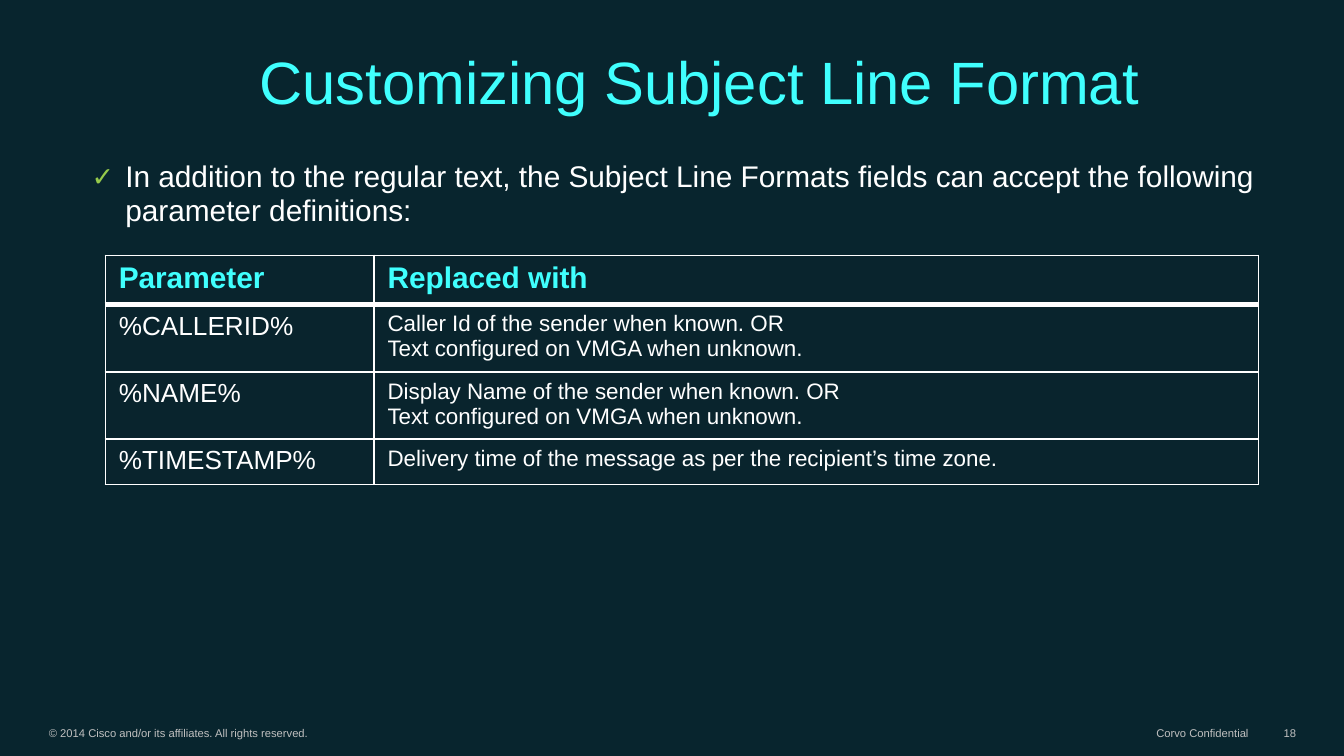
from lxml.etree import SubElement
from pptx import Presentation
from pptx.dml.color import RGBColor
from pptx.enum.text import MSO_ANCHOR, PP_ALIGN
from pptx.oxml.ns import qn
from pptx.util import Inches, Pt

# Content
TITLE = "Customizing Subject Line Format"
INTRO = ("In addition to the regular text, the Subject Line Formats fields "
         "can accept the following parameter definitions:")
ROWS = [
    ("Parameter", ["Replaced with"]),
    ("%CALLERID%", ["Caller Id of the sender when known. OR",
                    "Text configured on VMGA when unknown."]),
    ("%NAME%", ["Display Name of the sender when known. OR",
                "Text configured on VMGA when unknown."]),
    ("%TIMESTAMP%", ["Delivery time of the message as per the recipient’s time zone."]),
]
# Footer: text, left and width in percent, alignment, wrap
FOOT = [
    ("© 2014 Cisco and/or its affiliates. All rights reserved.",
     2.74, 37.4, PP_ALIGN.LEFT, True),
    ("Corvo Confidential", 85.1, 8.7, PP_ALIGN.RIGHT, False),
    ("18", 94.54, 2.8, PP_ALIGN.RIGHT, False),
]

# Theme
THEME = {
    "font": "Arial",
    "back": "08252E", "cell": "09242D", "text": "FFFFFF",
    "head": "40FFFE", "tick": "96CA4B", "foot": "C0C0C0",
    "title": 32, "body": 16, "name": 14, "note": 12, "small": 6,
}
WIDE = 10
HIGH = WIDE * 9 / 16

# Percent shares of the slide
COLS = [20, 65.8]
LINES = {1: 6.4, 2: 8.85}
LAST = 6


def across(share):
    return Inches(WIDE * share / 100)


def down(share):
    return Inches(HIGH * share / 100)


def tint(key):
    return RGBColor.from_string(THEME[key])


def put(item, **form):
    for key, value in form.items():
        setattr(item, key, value)


def write(frame, lines, size, color, bold=False, **form):
    """Fill a text frame, one paragraph a line."""
    for num, line in enumerate(lines):
        para = frame.add_paragraph() if num else frame.paragraphs[0]
        put(para, **form)
        run = para.add_run()
        run.text = line
        put(run.font, name=THEME["font"], size=Pt(THEME[size]), bold=bold)
        run.font.color.rgb = tint(color)


def add_box(slide, area, pads, wrap=True, anchor=MSO_ANCHOR.TOP):
    left, top, width, height = area
    frame = slide.shapes.add_textbox(
        across(left), down(top), across(width), down(height)).text_frame
    side, edge = map(Inches, pads)
    put(frame, word_wrap=wrap, vertical_anchor=anchor, margin_left=side,
        margin_right=side, margin_top=edge, margin_bottom=edge)
    return frame


def add_tick(para):
    props = para._p.get_or_add_pPr()
    props.set("marL", str(Inches(0.25)))
    props.set("indent", str(-Inches(0.25)))
    color = SubElement(props, qn("a:buClr"))
    SubElement(color, qn("a:srgbClr"), val=THEME["tick"])
    SubElement(props, qn("a:buSzPct"), val="90000")
    SubElement(props, qn("a:buFont"), typeface=THEME["font"])
    SubElement(props, qn("a:buChar"), char="✓")


def add_rules(cell, sides):
    props = cell._tc.get_or_add_tcPr()
    for side, width in sides.items():
        line = SubElement(props, qn(f"a:ln{side}"), w=str(Pt(width)))
        fill = SubElement(line, qn("a:solidFill"))
        SubElement(fill, qn("a:srgbClr"), val=THEME["text"])


def add_grid(slide):
    highs = [LINES[len(notes)] for _, notes in ROWS[:-1]] + [LAST]
    grid = slide.shapes.add_table(
        len(ROWS), len(COLS), across(7.84), down(33.78),
        across(sum(COLS)), down(sum(highs))).table
    put(grid, first_row=False, horz_banding=False)
    for col, share in zip(grid.columns, COLS):
        col.width = across(share)
    for num, (name, notes) in enumerate(ROWS):
        grid.rows[num].height = down(highs[num])
        head = num == 0
        sizes = ("body", "body") if head else ("name", "note")
        sides = {"L": 1, "R": 1, "T": 3 if num == 1 else 1, "B": 3 if head else 1}
        for cell, lines, size in zip(grid.rows[num].cells, ([name], notes), sizes):
            add_rules(cell, sides)
            cell.fill.solid()
            cell.fill.fore_color.rgb = tint("cell")
            write(cell.text_frame, lines, size, "head" if head else "text", head)


def main():
    deck = Presentation()
    put(deck, slide_width=Inches(WIDE), slide_height=Inches(HIGH))
    slide = deck.slides.add_slide(deck.slide_layouts[6])
    slide.background.fill.solid()
    slide.background.fill.fore_color.rgb = tint("back")

    # Footer
    for text, left, width, align, wrap in FOOT:
        frame = add_box(slide, (left, 95.15, width, 3.38), (0.09, 0.04),
                        wrap, MSO_ANCHOR.BOTTOM)
        write(frame, [text], "small", "foot", alignment=align)

    # Title
    frame = add_box(slide, (5.16, 4, 93.8, 12.27), (0.09, 0.05),
                    anchor=MSO_ANCHOR.BOTTOM)
    write(frame, [TITLE], "title", "head",
          alignment=PP_ALIGN.CENTER, line_spacing=0.8)

    # Bullet
    frame = add_box(slide, (5.84, 20.38, 89.8, 19.2), (0.1, 0.05))
    add_tick(frame.paragraphs[0])
    write(frame, [INTRO], "body", "text", line_spacing=0.95)

    # Parameter table
    add_grid(slide)
    deck.save("out.pptx")


if __name__ == "__main__":
    main()
